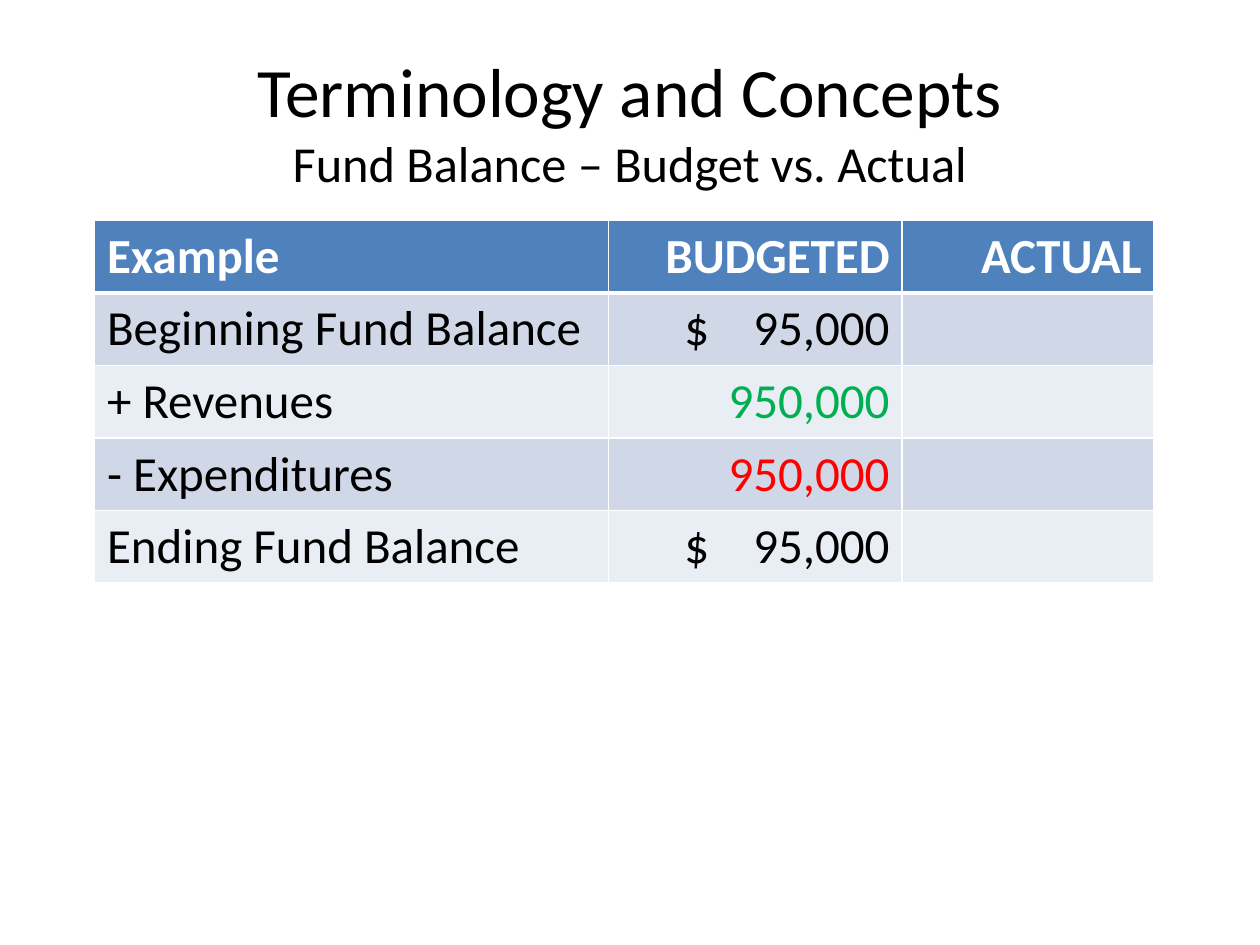
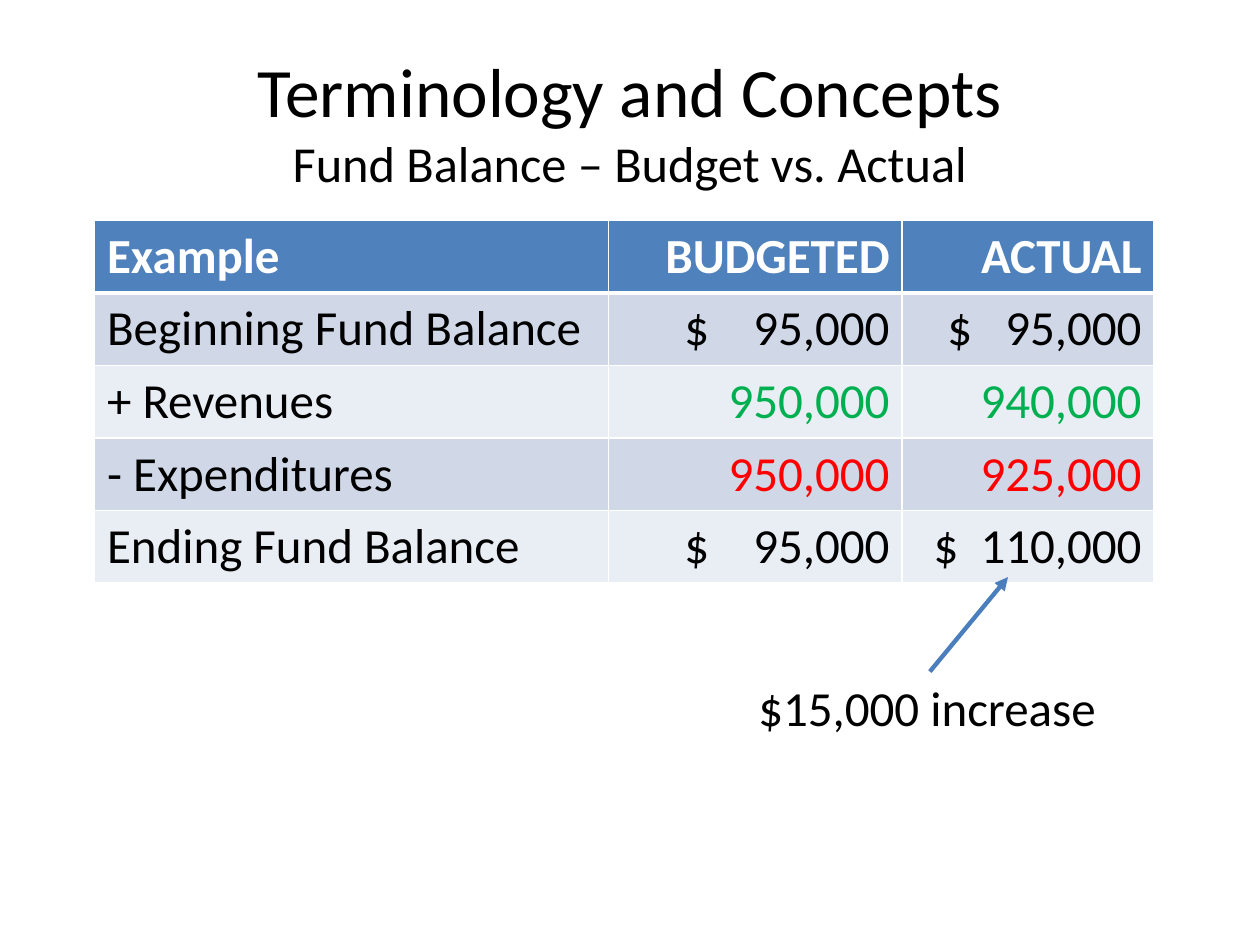
"""Build two slides comparing a budgeted and an actual fund balance."""
from dataclasses import dataclass

from lxml.etree import SubElement
from pptx import Presentation
from pptx.dml.color import RGBColor
from pptx.enum.shapes import MSO_CONNECTOR as Connector
from pptx.enum.text import MSO_ANCHOR as Anchor, MSO_AUTO_SIZE as AutoSize, PP_ALIGN as Align
from pptx.oxml.ns import qn
from pptx.util import Inches, Pt

FONT = "Calibri"
BLACK, WHITE = "000000", "FFFFFF"
GREEN, RED = "00B050", "FF0000"
HEADER_FILL, ARROW_BLUE = "4F81BD", "4B7EBC"
ROW_FILLS = ("D0D8E8", "E9EDF4")
BODY_SIZE = 28
SPACE_WIDTH = 6.33
COLUMN_WIDTHS = (4.08, 2.33, 2)
ROW_HEIGHT = 0.57


@dataclass(frozen=True)
class Amount:
    figure: str
    color: str = BLACK
    dollar_gap: int = 0


@dataclass(frozen=True)
class FundLine:
    label: str
    budgeted: Amount
    actual: Amount


FUND_LINES = (
    FundLine("Beginning Fund Balance", Amount("95,000", dollar_gap=4), Amount("95,000", dollar_gap=3)),
    FundLine("+ Revenues", Amount("950,000", GREEN), Amount("940,000", GREEN)),
    FundLine("- Expenditures", Amount("950,000", RED), Amount("925,000", RED)),
    FundLine("Ending Fund Balance", Amount("95,000", dollar_gap=4), Amount("110,000", dollar_gap=2)),
)


def rgb(color: str) -> RGBColor:
    """Turn a hex string into a colour."""
    return RGBColor.from_string(color)


def write(paragraph, text: str, *, size: float = BODY_SIZE, color: str = BLACK,
          bold: bool = False, align: Align = Align.LEFT, spacing: float = 0) -> None:
    """Add a formatted run to a paragraph."""
    paragraph.alignment = align
    run = paragraph.add_run()
    run.text = text
    run.font.name = FONT
    run.font.size = Pt(size)
    run.font.bold = bold
    run.font.color.rgb = rgb(color)
    if spacing:
        run.font._element.set("spc", str(round(spacing * 100)))


def write_amount(paragraph, amount: Amount) -> None:
    """Write a right-aligned amount, with its dollar sign set apart."""
    if amount.dollar_gap:
        write(paragraph, "$", align=Align.RIGHT)
        write(paragraph, " ", align=Align.RIGHT, spacing=(amount.dollar_gap - 1) * SPACE_WIDTH)
    write(paragraph, amount.figure, color=amount.color, align=Align.RIGHT)


def style_cell(cell, fill: str, top: float, bottom: float) -> None:
    """Give a cell white borders and a plain fill."""
    properties = cell._tc.get_or_add_tcPr()
    for side, width in (("L", 1), ("R", 1), ("T", top), ("B", bottom)):
        border = SubElement(properties, qn(f"a:ln{side}"), w=str(Pt(width)))
        SubElement(SubElement(border, qn("a:solidFill")), qn("a:srgbClr"), val=WHITE)
    cell.fill.solid()
    cell.fill.fore_color.rgb = rgb(fill)


def add_title(slide) -> None:
    """Place the two-line title in the title placeholder."""
    title = slide.shapes.title
    title.left, title.top, title.width, title.height = map(Inches, (0.5, 0.3, 9, 1.25))
    frame = title.text_frame
    frame.auto_size = AutoSize.NONE
    frame.vertical_anchor = Anchor.MIDDLE
    frame.margin_top, frame.margin_bottom = Inches(0.08), Inches(0.02)
    heading = frame.paragraphs[0]
    write(heading, "Terminology and Concepts", size=39.6, align=Align.CENTER)
    heading.add_line_break()
    write(heading, "Fund Balance – Budget vs. Actual", size=28.8, align=Align.CENTER)


def add_fund_table(slide, show_actual: bool) -> None:
    """Draw the fund balance table, with or without the actual amounts."""
    row_count = len(FUND_LINES) + 1
    table = slide.shapes.add_table(
        row_count, len(COLUMN_WIDTHS), Inches(0.75), Inches(1.75),
        Inches(sum(COLUMN_WIDTHS)), Inches(ROW_HEIGHT * row_count)).table
    for column, width in zip(table.columns, COLUMN_WIDTHS):
        column.width = Inches(width)
    for index, row in enumerate(table.rows):
        row.height = Inches(ROW_HEIGHT)
        fill = ROW_FILLS[(index - 1) % 2] if index else HEADER_FILL
        for cell in row.cells:
            style_cell(cell, fill, top=3 if index == 1 else 1, bottom=1 if index else 3)
    for column, heading in enumerate(("Example", "BUDGETED", "ACTUAL")):
        write(table.cell(0, column).text_frame.paragraphs[0], heading, color=WHITE,
              bold=True, align=Align.RIGHT if column else Align.LEFT)
    for index, line in enumerate(FUND_LINES, start=1):
        label, budgeted, actual = (cell.text_frame.paragraphs[0] for cell in table.rows[index].cells)
        write(label, line.label)
        write_amount(budgeted, line.budgeted)
        if show_actual:
            write_amount(actual, line.actual)


def add_increase_note(slide) -> None:
    """Add the increase and the arrow to the ending balance."""
    note = slide.shapes.add_textbox(*map(Inches, (5.92, 5.33, 2.92, 0.57)))
    note.text_frame.word_wrap = True
    write(note.text_frame.paragraphs[0], "$15,000 increase")
    arrow = slide.shapes.add_connector(Connector.STRAIGHT, *map(Inches, (7.38, 5.33, 8, 4.58)))
    arrow.line.color.rgb = rgb(ARROW_BLUE)
    arrow.line.width = Pt(2.5)
    SubElement(arrow.line._get_or_add_ln(), qn("a:tailEnd"), type="triangle")
    SubElement(arrow._element.spPr, qn("a:effectLst"))


def main() -> None:
    """Build and save the presentation."""
    deck = Presentation()
    deck.slide_width, deck.slide_height = Inches(10), Inches(7.5)
    for show_actual in (False, True):
        slide = deck.slides.add_slide(deck.slide_layouts[5])
        add_title(slide)
        add_fund_table(slide, show_actual)
        if show_actual:
            add_increase_note(slide)
    deck.save("out.pptx")


if __name__ == "__main__":
    main()
